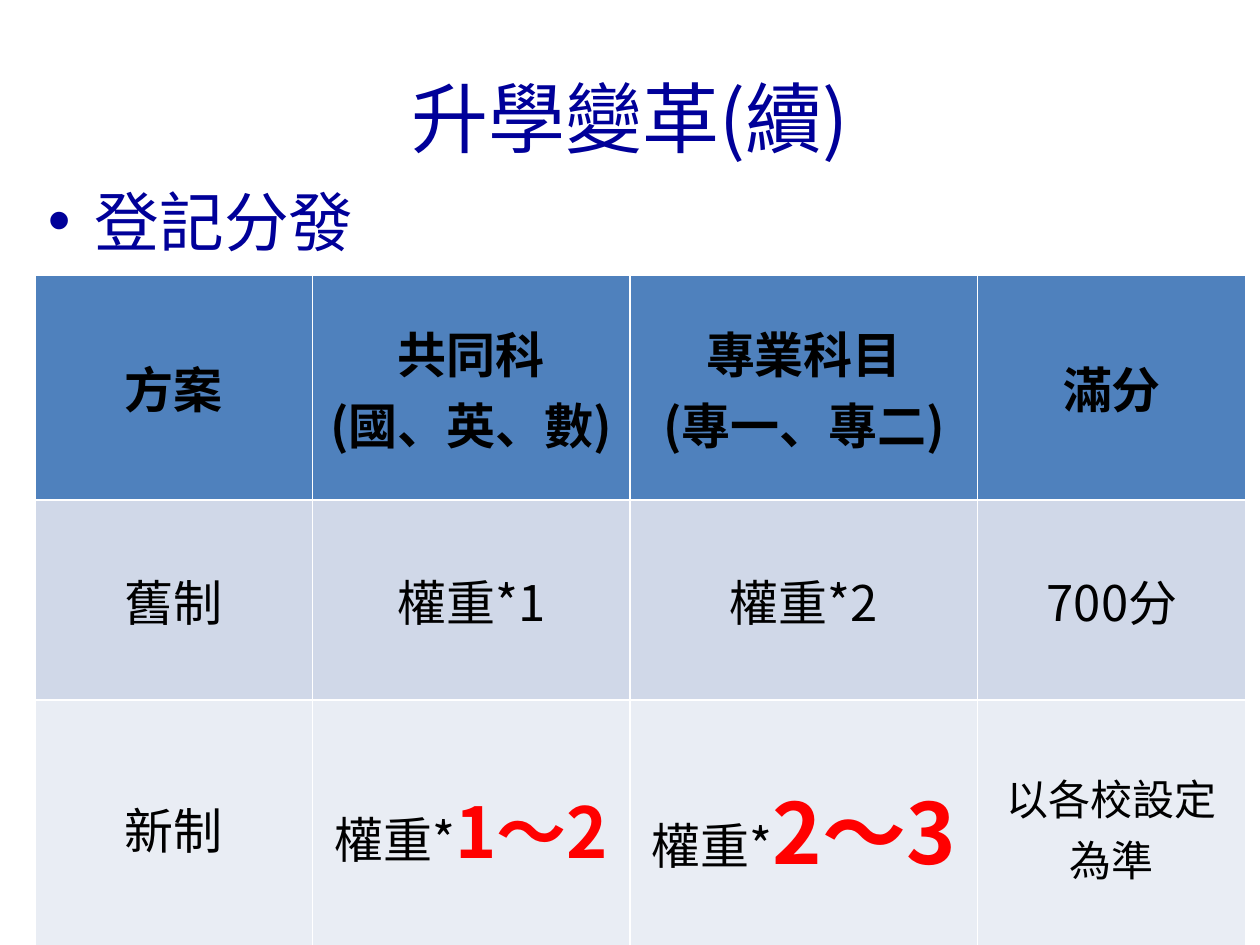
from lxml import etree
from pptx import Presentation
from pptx.dml.color import RGBColor
from pptx.enum.text import MSO_ANCHOR, MSO_AUTO_SIZE, PP_ALIGN
from pptx.oxml.ns import qn
from pptx.util import Cm, Pt

CENTER = PP_ALIGN.CENTER
MIDDLE = MSO_ANCHOR.MIDDLE
NO_AUTOFIT = MSO_AUTO_SIZE.NONE
FONT = "Noto Sans CJK SC"
COLORS = {
    "heading": "000099",
    "text": "000000",
    "accent": "FF0000",
    "header": "4F81BD",
    "old": "D0D8E8",
    "new": "E9EDF4",
}


class SlideBuilder:
    """Holds the style and the current slide, and adds each kind of element."""

    def __init__(self, slide):
        self.slide = slide

    def add_run(self, paragraph, text, size, color="text", bold=False):
        run = paragraph.add_run()
        run.text = text
        font = run.font
        font.size = Pt(size)
        font.bold = bold
        font.color.rgb = RGBColor.from_string(COLORS[color])
        font.name = FONT
        etree.SubElement(font._element, qn("a:ea"), typeface=FONT)

    def place(self, shape, left, top, width, height):
        shape.left, shape.top = Cm(left), Cm(top)
        shape.width, shape.height = Cm(width), Cm(height)
        shape.text_frame.auto_size = NO_AUTOFIT

    def title(self, text, bounds):
        shape = self.slide.shapes.title
        self.place(shape, *bounds)
        shape.text_frame.vertical_anchor = MIDDLE
        paragraph = shape.text_frame.paragraphs[0]
        paragraph.alignment = CENTER
        self.add_run(paragraph, text, 44, "heading")

    def bullet(self, text, bounds):
        shape = self.slide.placeholders[1]
        self.place(shape, *bounds)
        paragraph = shape.text_frame.paragraphs[0]
        paragraph.space_before = Pt(0)
        properties = paragraph._p.get_or_add_pPr()
        properties.set("marL", str(Cm(0.95)))
        properties.set("indent", str(-Cm(0.95)))
        etree.SubElement(properties, qn("a:buChar"), char="•")
        self.add_run(paragraph, text, 37, "heading")

    def cell(self, cell, lines, fill):
        cell.fill.solid()
        cell.fill.fore_color.rgb = RGBColor.from_string(COLORS[fill])
        cell.vertical_anchor = MIDDLE
        frame = cell.text_frame
        for index, runs in enumerate(lines):
            paragraph = frame.add_paragraph() if index else frame.paragraphs[0]
            paragraph.alignment = CENTER
            for run in runs:
                self.add_run(paragraph, *run)

    def table(self, left, top, widths, row_height, rows):
        shape = self.slide.shapes.add_table(
            len(rows), len(widths), Cm(left), Cm(top),
            Cm(sum(widths)), Cm(row_height * len(rows)))
        table = shape.table
        for column, width in zip(table.columns, widths):
            column.width = Cm(width)
        for row, (fill, cells) in zip(table.rows, rows):
            row.height = Cm(row_height)
            for cell, lines in zip(row.cells, cells):
                self.cell(cell, lines, fill)


def header(*lines):
    """Return bold header lines of one run each."""
    return [[(line, 28, "text", True)] for line in lines]


def plain(text, size=28):
    """Return one plain line."""
    return [[(text, size)]]


def weight(values, size):
    """Return a line whose weight range stands out."""
    return [[("權重*", 28), (values, size, "accent", True)]]


def main():
    """Build and save the presentation."""
    presentation = Presentation()
    presentation.slide_width, presentation.slide_height = Cm(25.4), Cm(19.05)
    slide = presentation.slides.add_slide(presentation.slide_layouts[1])
    builder = SlideBuilder(slide)
    builder.title("升學變革(續)", (1.27, 0.76, 22.86, 3.18))
    builder.bullet("登記分發", (0.71, 3.53, 23.39, 13.87))
    rows = [
        ("header", [header("方案"), header("共同科", "(國、英、數)"),
                    header("專業科目", "(專一、專二)"), header("滿分")]),
        ("old", [plain("舊制"), plain("權重*1"), plain("權重*2"), plain("700分")]),
        ("new", [plain("新制"), weight("1～2", 40), weight("2～3", 48),
                 plain("以各校設定為準", 24)]),
    ]
    builder.table(0.71, 5.54, (5.59, 6.4, 7.01, 5.41), 4.04, rows)
    presentation.save("out.pptx")


if __name__ == "__main__":
    main()
